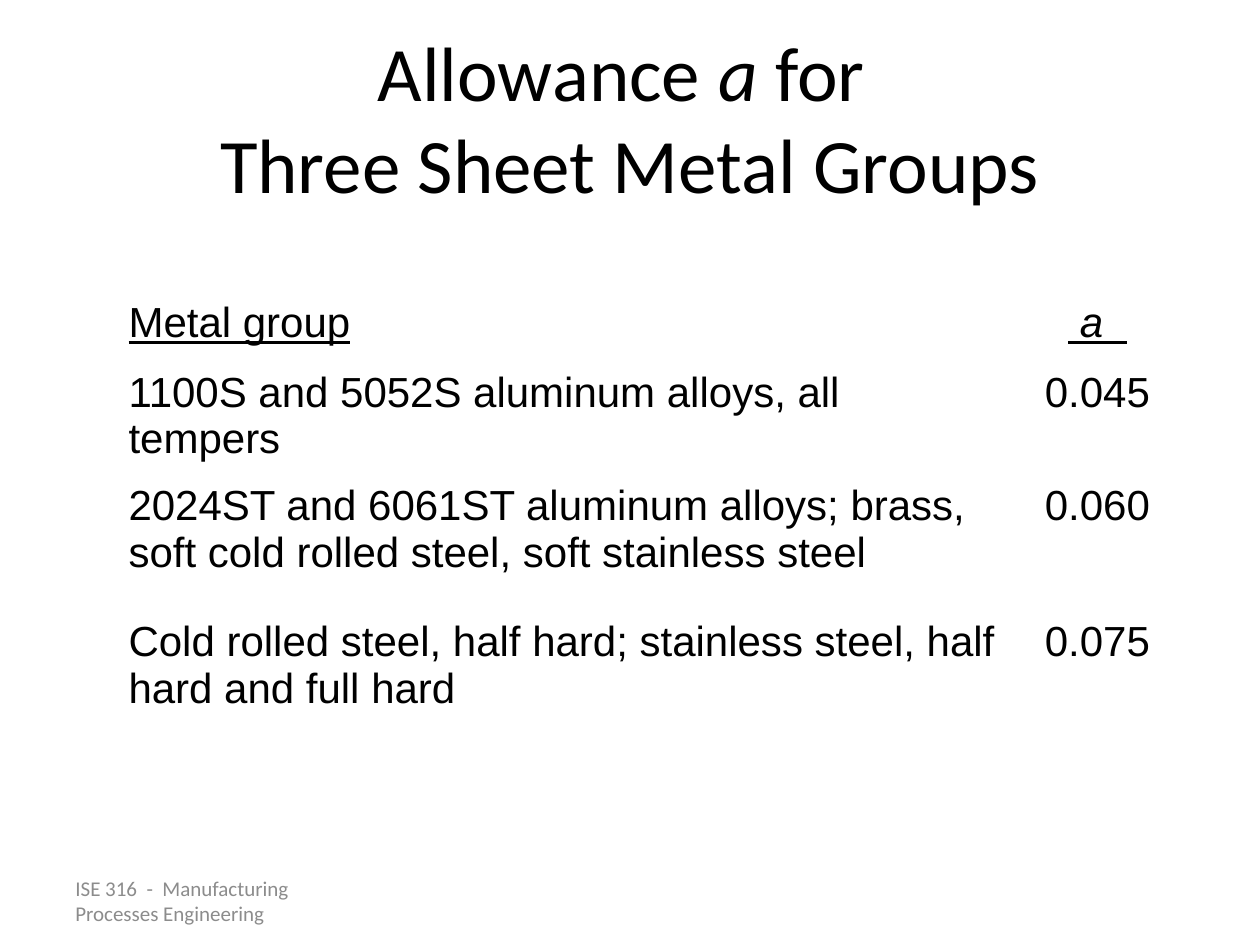
from dataclasses import dataclass

from pptx import Presentation
from pptx.dml.color import RGBColor
from pptx.enum.text import MSO_ANCHOR, PP_ALIGN
from pptx.util import Inches, Pt

LEFT, CENTER = PP_ALIGN.LEFT, PP_ALIGN.CENTER
MIDDLE = MSO_ANCHOR.MIDDLE


@dataclass(frozen=True)
class Theme:
    ink: RGBColor = RGBColor(0, 0, 0)
    gray: RGBColor = RGBColor(0x8C, 0x8C, 0x8C)
    head: str = "Calibri"
    body: str = "Arial"
    title: int = 44
    cell: int = 24
    foot: int = 12
    gap: int = 6


@dataclass(frozen=True)
class Row:
    group: str
    value: str
    height: float


THEME = Theme()
COLS = (7.08, 1.42)
ROWS = (
    Row("Metal group", " a  ", 0.55),
    Row("1100S and 5052S aluminum alloys, all tempers", "0.045", 0.73),
    Row("2024ST and 6061ST aluminum alloys; brass, "
        "soft cold rolled steel, soft stainless steel", "0.060", 1.08),
    Row("Cold rolled steel, half hard; stainless steel, "
        "half hard and full hard", "0.075", 0.97),
)


def style(para, font: str, size: int, color: RGBColor, align=LEFT) -> None:
    para.alignment = align
    for run in para.runs:
        run.font.name = font
        run.font.size = Pt(size)
        run.font.color.rgb = color


def add_box(slide, left: float, top: float, width: float, height: float):
    box = slide.shapes.add_textbox(
        Inches(left), Inches(top), Inches(width), Inches(height))
    frame = box.text_frame
    frame.word_wrap = True
    frame.vertical_anchor = MIDDLE
    return frame


def add_title(slide) -> None:
    para = add_box(slide, 0.5, 0.3, 9, 1.25).paragraphs[0]
    para.text = "Allowance "
    symbol = para.add_run()
    symbol.text = "a"
    symbol.font.italic = True
    para.add_run().text = " for "
    para.add_line_break()
    para.add_run().text = "Three Sheet Metal Groups"
    style(para, THEME.head, THEME.title, THEME.ink, CENTER)


def add_foot(slide) -> None:
    frame = add_box(slide, 0.5, 6.95, 2.33, 0.4)
    frame.text = "ISE 316  -  Manufacturing  Processes Engineering"
    style(frame.paragraphs[0], THEME.head, THEME.foot, THEME.gray)


def fill_cell(cell, text: str, align) -> None:
    cell.fill.background()
    para = cell.text_frame.paragraphs[0]
    para.text = text
    para.space_before = Pt(THEME.gap)
    style(para, THEME.body, THEME.cell, THEME.ink, align)


def add_grid(slide) -> None:
    table = slide.shapes.add_table(
        len(ROWS), len(COLS), Inches(0.92), Inches(2.33), Inches(sum(COLS)),
        Inches(sum(row.height for row in ROWS))).table
    table.first_row = table.horz_banding = False
    for col, width in zip(table.columns, COLS):
        col.width = Inches(width)
    for i, row in enumerate(ROWS):
        table.rows[i].height = Inches(row.height)
        fill_cell(table.cell(i, 0), row.group, LEFT)
        fill_cell(table.cell(i, 1), row.value, CENTER)

    # Underlined headings, with the symbol in italics
    for j in range(len(COLS)):
        font = table.cell(0, j).text_frame.paragraphs[0].runs[0].font
        font.underline = True
        font.italic = j == 1


def main() -> None:
    deck = Presentation()
    deck.slide_width, deck.slide_height = Inches(10), Inches(7.5)
    slide = deck.slides.add_slide(deck.slide_layouts[6])
    add_foot(slide)
    add_title(slide)
    add_grid(slide)
    deck.save("out.pptx")


if __name__ == "__main__":
    main()
